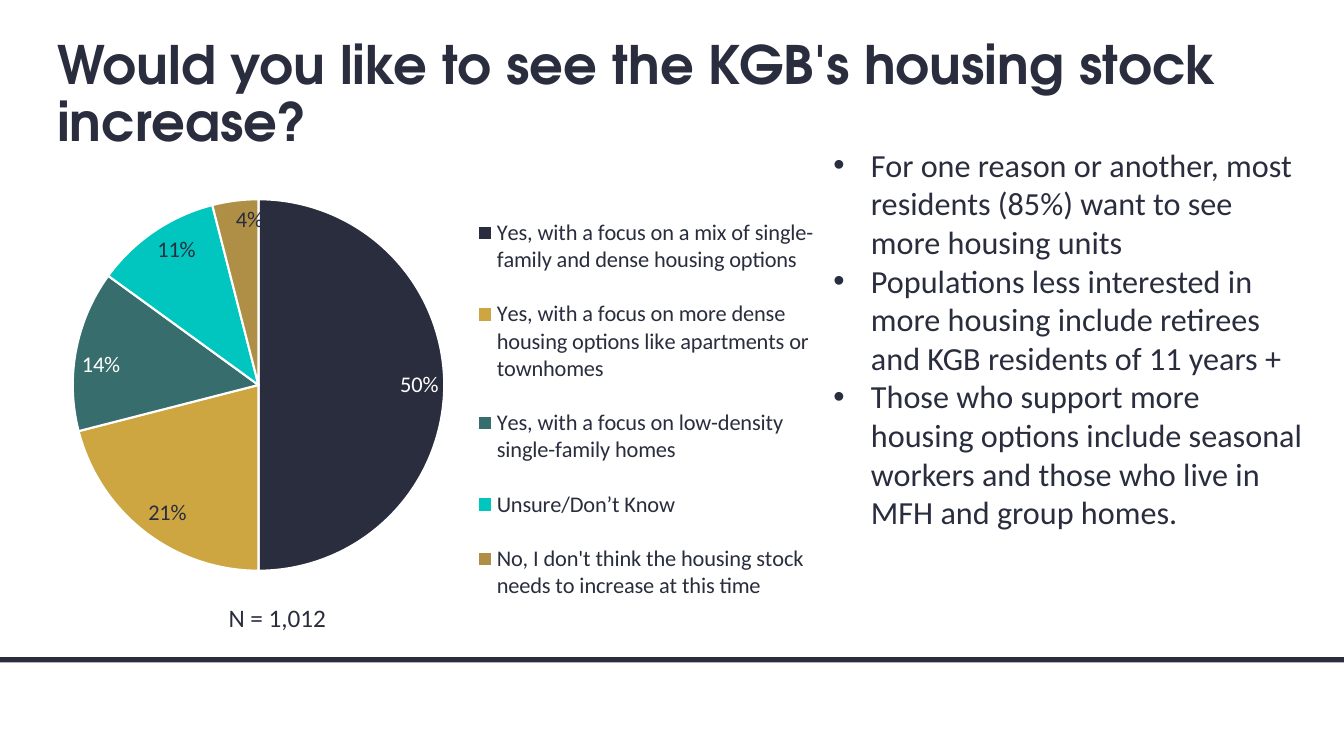
from lxml.etree import SubElement
from pptx import Presentation
from pptx.chart.data import CategoryChartData
from pptx.dml.color import RGBColor
from pptx.enum.chart import XL_CHART_TYPE, XL_LABEL_POSITION, XL_LEGEND_POSITION
from pptx.enum.shapes import MSO_SHAPE
from pptx.enum.text import MSO_ANCHOR
from pptx.oxml.ns import qn
from pptx.util import Cm, Pt

NAVY = RGBColor(0x29, 0x2D, 0x3D)
GOLD = RGBColor(0xCD, 0xA6, 0x42)
PINE = RGBColor(0x37, 0x6E, 0x6D)
TEAL = RGBColor(0x00, 0xC6, 0xBF)
BRONZE = RGBColor(0xAE, 0x8F, 0x45)
WHITE = RGBColor(0xFF, 0xFF, 0xFF)

TITLE = {"name": "TeX Gyre Adventor", "size": Pt(37.8), "bold": True}
BODY = {"name": "Calibri", "size": Pt(23)}
NOTE = {"name": "Calibri", "size": Pt(18)}
LABEL = {"name": "Calibri", "size": Pt(16)}

ANSWERS = [
    ("Yes, with a focus on a mix of single-family and dense housing options",
     0.50, NAVY, WHITE),
    ("Yes, with a focus on more dense housing options like apartments or townhomes",
     0.21, GOLD, NAVY),
    ("Yes, with a focus on low-density single-family homes", 0.14, PINE, WHITE),
    ("Unsure/Don’t Know", 0.11, TEAL, NAVY),
    ("No, I don't think the housing stock needs to increase at this time",
     0.04, BRONZE, NAVY),
]
POINTS = [
    "For one reason or another, most residents (85%) want to see more housing units",
    "Populations less interested in more housing include retirees and KGB residents "
    "of 11 years +",
    "Those who support more housing options include seasonal workers and those who "
    "live in MFH and group homes.",
]
TEXTS = [
    ((1.19, 1.02, 31.34, 2.97), ["Would you like to see the KGB's housing stock increase?"],
     TITLE, {"line_spacing": 0.9}, MSO_ANCHOR.BOTTOM, False),
    ((20.75, 3.53, 12.34, 12.07), POINTS, BODY, {}, MSO_ANCHOR.TOP, True),
    ((5.51, 15.06, 4.01, 1.07), ["N = 1,012"], NOTE, {}, MSO_ANCHOR.TOP, False),
]


def style(font, form, color=NAVY):
    for key, val in form.items():
        setattr(font, key, val)
    font.color.rgb = color


def lay_out(part, index, inner, **box):
    """Place a chart part by fractions of the chart area."""
    for old in part.findall(qn("c:layout")):
        part.remove(old)
    layout = part.makeelement(qn("c:layout"))
    part.insert(index, layout)
    manual = SubElement(layout, qn("c:manualLayout"))
    if inner:
        SubElement(manual, qn("c:layoutTarget")).set("val", "inner")
    for mode in ("xMode", "yMode"):
        SubElement(manual, qn("c:" + mode)).set("val", "edge")
    for key, val in box.items():
        SubElement(manual, qn("c:" + key)).set("val", str(val))


deck = Presentation()
deck.slide_width, deck.slide_height = Cm(33.87), Cm(19.05)
slide = deck.slides.add_slide(deck.slide_layouts[6])

bar = slide.shapes.add_shape(MSO_SHAPE.RECTANGLE, 0, Cm(16.56), deck.slide_width, Cm(0.13))
bar.shadow.inherit = False
bar.fill.solid()
bar.fill.fore_color.rgb = NAVY
bar.line.fill.background()

# Title, findings and sample size
for place, lines, form, spacing, anchor, bullet in TEXTS:
    frame = slide.shapes.add_textbox(*map(Cm, place)).text_frame
    frame.word_wrap = True
    frame.vertical_anchor = anchor
    for num, line in enumerate(lines):
        para = frame.add_paragraph() if num else frame.paragraphs[0]
        para.text = line
        if bullet:
            props = para._p.get_or_add_pPr()
            props.set("marL", str(Cm(0.95)))
            props.set("indent", str(-Cm(0.95)))
            SubElement(props, qn("a:buFont")).set("typeface", "Arial")
            SubElement(props, qn("a:buChar")).set("char", "•")
        for key, val in spacing.items():
            setattr(para, key, val)
        style(para.runs[0].font, form)

# Pie of answers
data = CategoryChartData(number_format="0%")
data.categories = [answer[0] for answer in ANSWERS]
data.add_series("Series 1", [answer[1] for answer in ANSWERS])
chart = slide.shapes.add_chart(
    XL_CHART_TYPE.PIE, Cm(0.41), Cm(3.99), Cm(20.35), Cm(12.42), data).chart
chart.has_title = False
style(chart.font, LABEL)

chart.has_legend = True
legend = chart.legend
legend.position = XL_LEGEND_POSITION.RIGHT
legend.include_in_layout = False
style(legend.font, LABEL)
lay_out(legend._element, 1, False, x=0.56, y=0.07, w=0.44, h=0.88)

plot = chart.plots[0]
plot.vary_by_categories = True
lay_out(plot._element.getparent(), 0, True, x=0.07, y=0.08, w=0.46, h=0.76)
plot.has_data_labels = True
labels = plot.data_labels
labels.number_format = "0%"
labels.number_format_is_linked = False
labels.show_value = True
labels.position = XL_LABEL_POSITION.INSIDE_END
style(labels.font, LABEL)

for num, (_, _, color, ink) in enumerate(ANSWERS):
    point = plot.series[0].points[num]
    point.format.fill.solid()
    point.format.fill.fore_color.rgb = color
    point.format.line.color.rgb = WHITE
    point.format.line.width = Pt(1.5)
    style(point.data_label.font, LABEL, ink)
    point.data_label.position = XL_LABEL_POSITION.INSIDE_END

deck.save("out.pptx")
